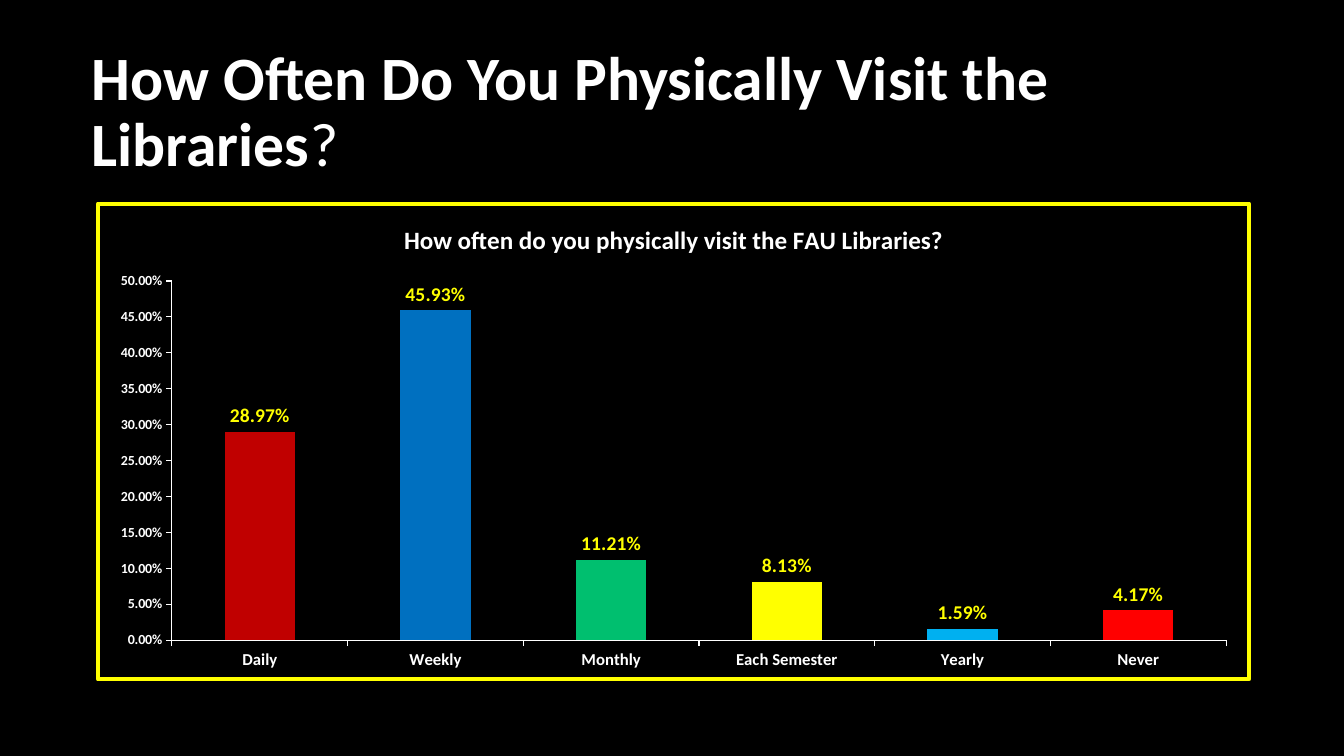
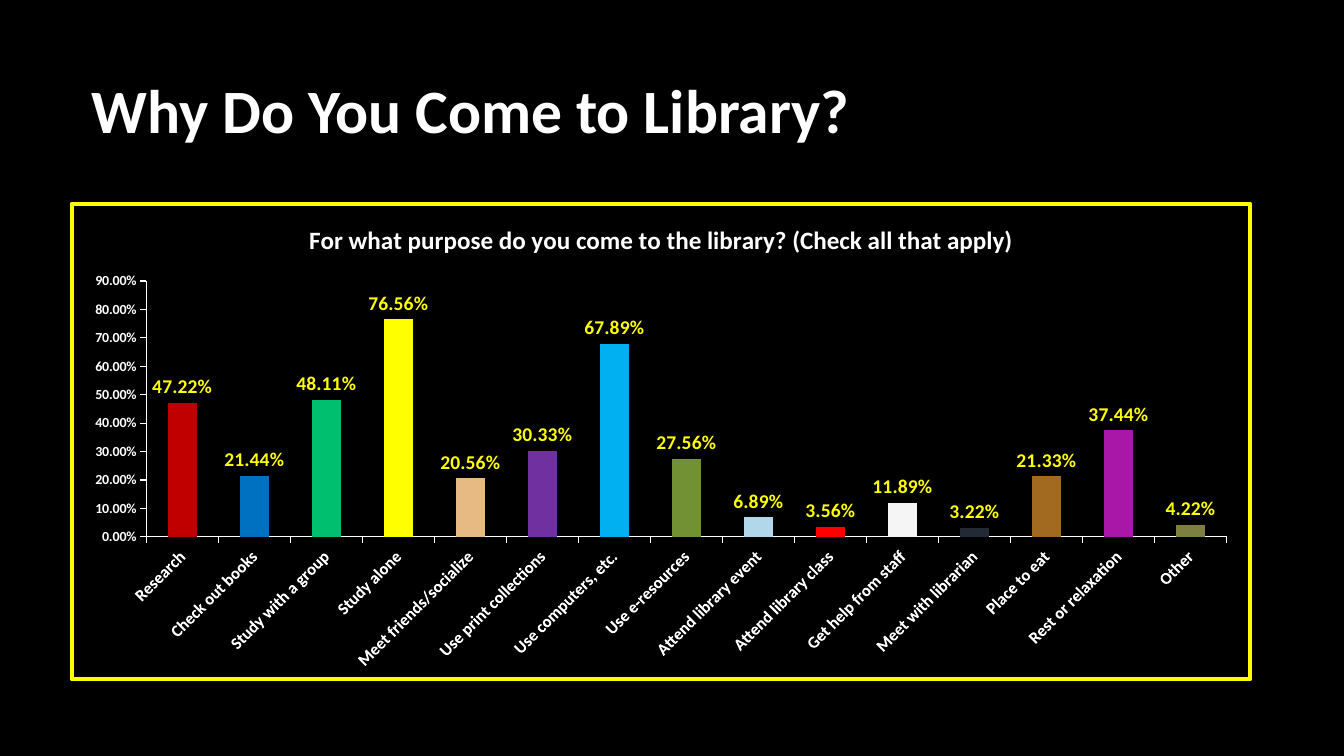
from dataclasses import dataclass

from lxml import etree
from pptx import Presentation
from pptx.chart.data import CategoryChartData
from pptx.dml.color import RGBColor
from pptx.enum import chart as chart_enum, text
from pptx.util import Inches, Pt

SURVEY = [
    {
        "heading": [("How Often Do You Physically Visit the Libraries", True), ("?", False)],
        "question": "How often do you physically visit the FAU Libraries?",
        "left": 0.95,
        "width": 11.46,
        "scale": (0.5, 0.05),
        "label_angle": 0,
        "answers": [
            ("Daily", 0.2897, "C00000"),
            ("Weekly", 0.4593, "0070C0"),
            ("Monthly", 0.1121, "00BF6F"),
            ("Each Semester", 0.0813, "FFFF00"),
            ("Yearly", 0.0159, "00B0F0"),
            ("Never", 0.0417, "FF0000"),
        ],
    },
    {
        "heading": [("Why Do You Come to Library?", True)],
        "question": "For what purpose do you come to the library? (Check all that apply)",
        "left": 0.69,
        "width": 11.73,
        "scale": (0.9, 0.1),
        "label_angle": -45,
        "answers": [
            ("Research", 0.4722, "C00000"),
            ("Check out books", 0.2144, "0070C0"),
            ("Study with a group", 0.4811, "00BF6F"),
            ("Study alone", 0.7656, "FFFF00"),
            ("Meet friends/socialize", 0.2056, "E6BA82"),
            ("Use print collections", 0.3033, "7030A0"),
            ("Use computers, etc.", 0.6789, "00B0F0"),
            ("Use e-resources", 0.2756, "729134"),
            ("Attend library event", 0.0689, "B1D7EB"),
            ("Attend library class", 0.0356, "FF0000"),
            ("Get help from staff", 0.1189, "F5F5F5"),
            ("Meet with librarian", 0.0322, "222A35"),
            ("Place to eat", 0.2133, "A26921"),
            ("Rest or relaxation", 0.3744, "A917A9"),
            ("Other", 0.0422, "7D8040"),
        ],
    },
]


@dataclass(frozen=True)
class Theme:
    face: str = "Calibri"
    background: str = "000000"
    ink: str = "FFFFFF"
    accent: str = "FFFF00"
    heading: int = 44
    question: int = 18
    value: int = 14
    category: int = 12
    scale: int = 10
    border: int = 3
    percent: str = "0.00%"


THEME = Theme()
HEADING_BOX = {"left": 0.81, "top": 0.4, "width": 11.89, "height": 1.45}
CHART_TOP, CHART_HEIGHT = 2, 4.76
DRAWING = "http://schemas.openxmlformats.org/drawingml/2006/main"
CHARTING = "http://schemas.openxmlformats.org/drawingml/2006/chart"


def apply(target, values):
    for key, value in values.items():
        setattr(target, key, value)


def style_font(font, size, color=THEME.ink, bold=True):
    apply(font, {"name": THEME.face, "size": Pt(size), "bold": bold})
    font.color.rgb = RGBColor.from_string(color)


def write_heading(title, parts):
    apply(title, {side: Inches(value) for side, value in HEADING_BOX.items()})
    frame = title.text_frame
    apply(frame, {"vertical_anchor": text.MSO_ANCHOR.MIDDLE, "word_wrap": True,
                  "auto_size": text.MSO_AUTO_SIZE.NONE})
    paragraph = frame.paragraphs[0]
    apply(paragraph, {"alignment": text.PP_ALIGN.LEFT, "line_spacing": 0.9})
    for words, bold in parts:
        run = paragraph.add_run()
        run.text = words
        style_font(run.font, THEME.heading, bold=bold)


def frame_chart(chart):
    border = etree.fromstring(
        f'<c:spPr xmlns:c="{CHARTING}" xmlns:a="{DRAWING}">'
        f'<a:solidFill><a:srgbClr val="{THEME.background}"/></a:solidFill>'
        f'<a:ln w="{Pt(THEME.border)}"><a:solidFill><a:srgbClr val="{THEME.accent}"/>'
        '</a:solidFill><a:round/></a:ln></c:spPr>')
    chart.element.find(f"{{{CHARTING}}}chart").addnext(border)


def style_axis(axis, size):
    apply(axis, {"has_major_gridlines": False,
                 "major_tick_mark": chart_enum.XL_TICK_MARK.OUTSIDE,
                 "minor_tick_mark": chart_enum.XL_TICK_MARK.NONE})
    axis.format.line.color.rgb = RGBColor.from_string(THEME.ink)
    axis.format.line.width = Pt(0.75)
    style_font(axis.tick_labels.font, size)


def add_answers(slide, topic):
    names, shares, colors = zip(*topic["answers"])
    data = CategoryChartData(number_format=THEME.percent)
    data.categories = names
    data.add_series("Series 1", shares)
    chart = slide.shapes.add_chart(
        chart_enum.XL_CHART_TYPE.COLUMN_CLUSTERED, Inches(topic["left"]),
        Inches(CHART_TOP), Inches(topic["width"]), Inches(CHART_HEIGHT), data).chart
    style_font(chart.font, THEME.scale, bold=False)
    frame_chart(chart)
    apply(chart, {"has_legend": False, "has_title": True})
    question = chart.chart_title.text_frame
    question.text = topic["question"]
    style_font(question.paragraphs[0].runs[0].font, THEME.question)

    style_axis(chart.category_axis, THEME.category)
    style_axis(chart.value_axis, THEME.scale)
    top, step = topic["scale"]
    apply(chart.value_axis, {"minimum_scale": 0, "maximum_scale": top, "major_unit": step})
    percent = {"number_format": THEME.percent, "number_format_is_linked": False}
    apply(chart.value_axis.tick_labels, percent)
    if topic["label_angle"]:
        for body in chart.element.xpath(".//c:catAx/c:txPr/a:bodyPr"):
            body.set("rot", str(topic["label_angle"] * 60000))

    plot = chart.plots[0]
    apply(plot, {"gap_width": 150, "vary_by_categories": False, "has_data_labels": True})
    apply(plot.data_labels, {**percent, "show_value": True,
                             "position": chart_enum.XL_LABEL_POSITION.OUTSIDE_END})
    style_font(plot.data_labels.font, THEME.value, THEME.accent)
    for index, color in enumerate(colors):
        fill = plot.series[0].points[index].format.fill
        fill.solid()
        fill.fore_color.rgb = RGBColor.from_string(color)


def main():
    deck = Presentation()
    apply(deck, {"slide_width": Inches(13.33), "slide_height": Inches(7.5)})
    backdrop = deck.slide_master.background.fill
    backdrop.solid()
    backdrop.fore_color.rgb = RGBColor.from_string(THEME.background)
    for topic in SURVEY:
        slide = deck.slides.add_slide(deck.slide_layouts[5])
        write_heading(slide.shapes.title, topic["heading"])
        add_answers(slide, topic)
    deck.save("out.pptx")


if __name__ == "__main__":
    main()
